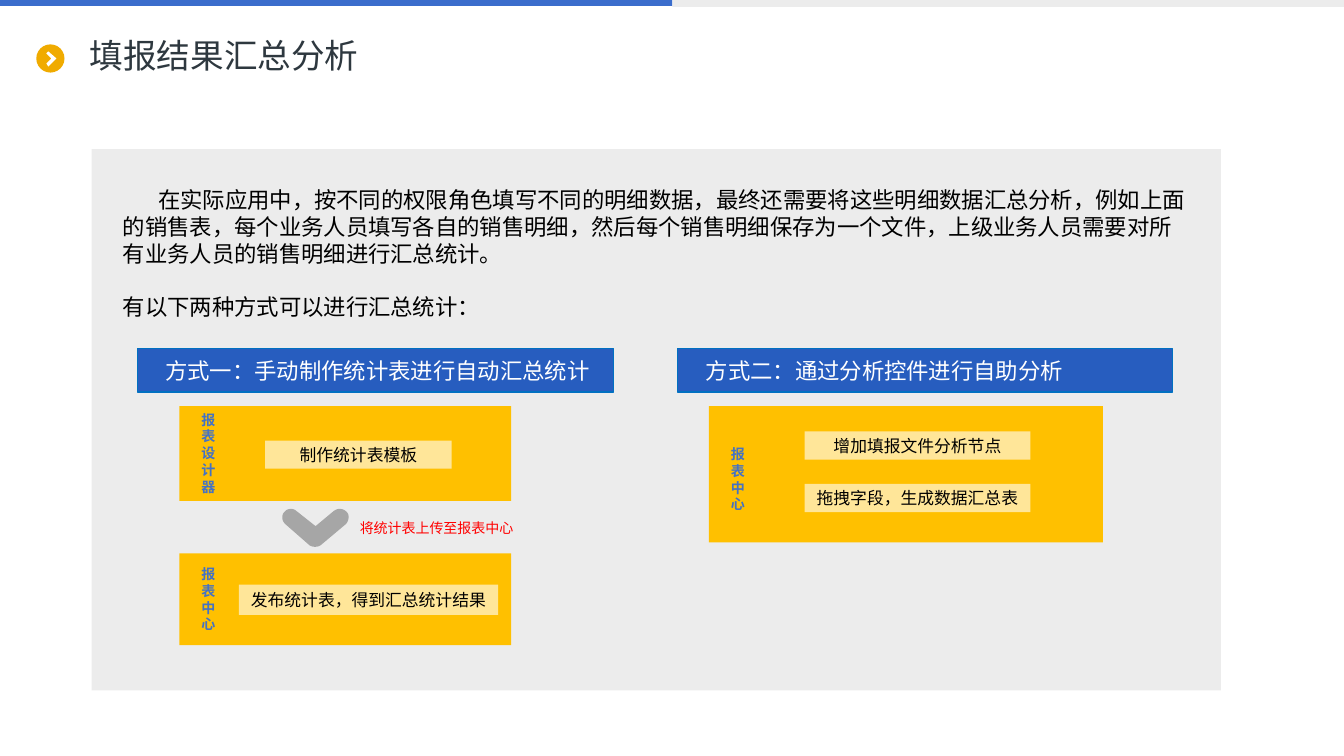
import dataclasses

import pptx
import pptx.dml.color
import pptx.enum.shapes
import pptx.enum.text
import pptx.oxml.ns
import pptx.util
from lxml import etree
from pptx.util import Inches

ALIGN = pptx.enum.text.PP_ALIGN
ANCHOR = pptx.enum.text.MSO_ANCHOR
SHAPE = pptx.enum.shapes.MSO_SHAPE


@dataclasses.dataclass(frozen=True)
class Theme:
    font: str = "Noto Sans CJK SC"
    # Colours
    bar: str = "3B6DCC"
    panel: str = "ECECEC"
    marker: str = "F0AB00"
    title: str = "2E383F"
    banner: str = "275DBF"
    banner_edge: str = "0170C1"
    stage: str = "FFC000"
    step: str = "FFE699"
    role: str = "4472C4"
    arrow: str = "A6A6A6"
    note: str = "FF0000"
    black: str = "000000"
    white: str = "FFFFFF"
    # Type sizes
    title_size: int = 24
    body_size: int = 16
    step_size: int = 12
    small_size: int = 10


THEME = Theme()


def rgb(value):
    return pptx.dml.color.RGBColor.from_string(value)


def write_text(frame, text, size=THEME.body_size, color=THEME.black, bold=False,
               align=ALIGN.LEFT, first_indent=0, space_before=0, line_spacing=None,
               append=False):
    """Write one formatted paragraph into a text frame."""
    paragraph = frame.add_paragraph() if append else frame.paragraphs[0]
    paragraph.alignment = align
    paragraph.space_before = pptx.util.Pt(space_before)
    if line_spacing:
        paragraph.line_spacing = line_spacing
    if first_indent:
        paragraph._p.get_or_add_pPr().set("indent", str(Inches(first_indent)))
    run = paragraph.add_run()
    run.text = text
    run.font.size = pptx.util.Pt(size)
    run.font.bold = bold
    run.font.color.rgb = rgb(color)
    run.font.name = THEME.font
    east_asian = etree.SubElement(run.font._element, pptx.oxml.ns.qn("a:ea"))
    east_asian.set("typeface", THEME.font)


def curve(start, control_1, control_2, end, steps=8):
    """Return points along a cubic curve, without its start."""
    points = []
    for i in range(1, steps + 1):
        t = i / steps
        weights = ((1 - t) ** 3, 3 * t * (1 - t) ** 2, 3 * t * t * (1 - t), t ** 3)
        anchors = (start, control_1, control_2, end)
        points.append(tuple(sum(w * p[axis] for w, p in zip(weights, anchors))
                            for axis in (0, 1)))
    return points


class SlideBuilder:
    def __init__(self, slide, theme):
        self.slide = slide
        self.theme = theme

    def paint(self, shape, fill, line=None):
        shape.shadow.inherit = False
        shape.fill.solid()
        shape.fill.fore_color.rgb = rgb(fill)
        if line:
            shape.line.color.rgb = rgb(line)
            shape.line.width = pptx.util.Pt(0.75)
        else:
            shape.line.fill.background()
        return shape

    def block(self, x, y, w, h, fill, line=None, kind=SHAPE.RECTANGLE):
        shape = self.slide.shapes.add_shape(kind, *map(Inches, (x, y, w, h)))
        return self.paint(shape, fill, line)

    def outline(self, points, fill):
        start, *rest = [(Inches(x), Inches(y)) for x, y in points]
        builder = self.slide.shapes.build_freeform(*start)
        builder.add_line_segments(rest, close=True)
        return self.paint(builder.convert_to_shape(), fill)

    def text_box(self, x, y, w, h, wrap=True):
        box = self.slide.shapes.add_textbox(*map(Inches, (x, y, w, h)))
        box.text_frame.word_wrap = wrap
        box.text_frame.auto_size = pptx.enum.text.MSO_AUTO_SIZE.SHAPE_TO_FIT_TEXT
        return box.text_frame

    def title(self, text, x, y, w, h):
        holder = self.slide.shapes.title
        holder.left, holder.top, holder.width, holder.height = map(Inches, (x, y, w, h))
        holder.text_frame.vertical_anchor = ANCHOR.MIDDLE
        write_text(holder.text_frame, text, size=self.theme.title_size,
                   color=self.theme.title, line_spacing=0.9)

    def banner(self, text, x, w):
        shape = self.block(x, 3.46, w, 0.43, self.theme.banner, self.theme.banner_edge)
        frame = shape.text_frame
        frame.margin_left = Inches(0.28)
        frame.margin_top = frame.margin_right = frame.margin_bottom = 0
        frame.vertical_anchor = ANCHOR.MIDDLE
        write_text(frame, text, color=self.theme.white)

    def step(self, text, x, y, w, h=0.28):
        frame = self.block(x, y, w, h, self.theme.step).text_frame
        frame.vertical_anchor = ANCHOR.MIDDLE
        frame.word_wrap = True
        write_text(frame, text, size=self.theme.step_size, align=ALIGN.CENTER)

    def role(self, text, x, y, h):
        # The narrow box stacks one character per line
        write_text(self.text_box(x, y, 0.24, h), text, size=self.theme.small_size,
                   color=self.theme.role, bold=True)


def main():
    deck = pptx.Presentation()
    deck.slide_width, deck.slide_height = Inches(13.33), Inches(7.5)
    page = SlideBuilder(deck.slides.add_slide(deck.slide_layouts[5]), THEME)

    # Header: top bar, round marker and title
    page.block(0, 0, 6.67, 0.06, THEME.bar)
    page.block(6.67, 0, 6.66, 0.07, THEME.panel)
    page.block(0.36, 0.44, 0.28, 0.28, THEME.marker, kind=SHAPE.OVAL)
    page.outline([(0.46, 0.53), (0.48, 0.51), (0.56, 0.58), (0.48, 0.66),
                  (0.46, 0.63), (0.51, 0.58)], THEME.white)
    page.title("填报结果汇总分析", 0.79, 0.28, 8.02, 0.59)

    # Panel with introduction
    page.block(0.91, 1.48, 11.2, 5.37, THEME.panel)
    intro = page.text_box(1.12, 1.8, 10.77, 1.45)
    write_text(intro, "在实际应用中，按不同的权限角色填写不同的明细数据，最终还需要将这些明细数据汇总分析，"
               "例如上面的销售表，每个业务人员填写各自的销售明细，然后每个销售明细保存为一个文件，"
               "上级业务人员需要对所有业务人员的销售明细进行汇总统计。", first_indent=0.35)
    write_text(intro, "有以下两种方式可以进行汇总统计：", space_before=19, append=True)

    # Method banners
    page.banner("方式一：手动制作统计表进行自动汇总统计", 1.36, 4.73)
    page.banner("方式二：通过分析控件进行自助分析", 6.72, 4.91)

    # Stages: block, role label and its steps
    stages = [
        ((1.78, 4.03, 3.29, 0.94), ("报表设计器", 4.03, 0.94),
         [("制作统计表模板", 2.63, 4.37, 1.85)]),
        ((1.78, 5.49, 3.29, 0.91), ("报表中心", 5.56, 0.77),
         [("发布统计表，得到汇总统计结果", 2.37, 5.8, 2.57, 0.3)]),
        ((7.03, 4.03, 3.91, 1.35), ("报表中心", 4.37, 0.77),
         [("增加填报文件分析节点", 7.98, 4.28, 2.24),
          ("拖拽字段，生成数据汇总表", 7.98, 4.8, 2.24)]),
    ]
    for area, (role, role_top, role_height), steps in stages:
        page.block(*area, THEME.stage)
        page.role(role, area[0] + 0.12, role_top, role_height)
        for step in steps:
            page.step(*step)

    # Upload arrow and note
    page.outline([
        (3.07, 5.41), (2.83, 5.2),
        *curve((2.83, 5.2), (2.81, 5.18), (2.8, 5.16), (2.8, 5.13)),
        *curve((2.8, 5.13), (2.8, 5.11), (2.81, 5.09), (2.82, 5.08)),
        *curve((2.82, 5.08), (2.85, 5.04), (2.91, 5.04), (2.94, 5.07)),
        (3.13, 5.22), (3.31, 5.07),
        *curve((3.31, 5.07), (3.35, 5.04), (3.4, 5.04), (3.44, 5.08)),
        *curve((3.44, 5.08), (3.47, 5.11), (3.46, 5.17), (3.43, 5.2)),
        (3.18, 5.41),
        *curve((3.18, 5.41), (3.15, 5.43), (3.1, 5.43), (3.07, 5.41)),
    ], THEME.arrow)
    write_text(page.text_box(3.47, 5.1, 1.73, 0.27, wrap=False), "将统计表上传至报表中心",
               size=THEME.small_size, color=THEME.note)

    deck.save("out.pptx")


if __name__ == "__main__":
    main()
